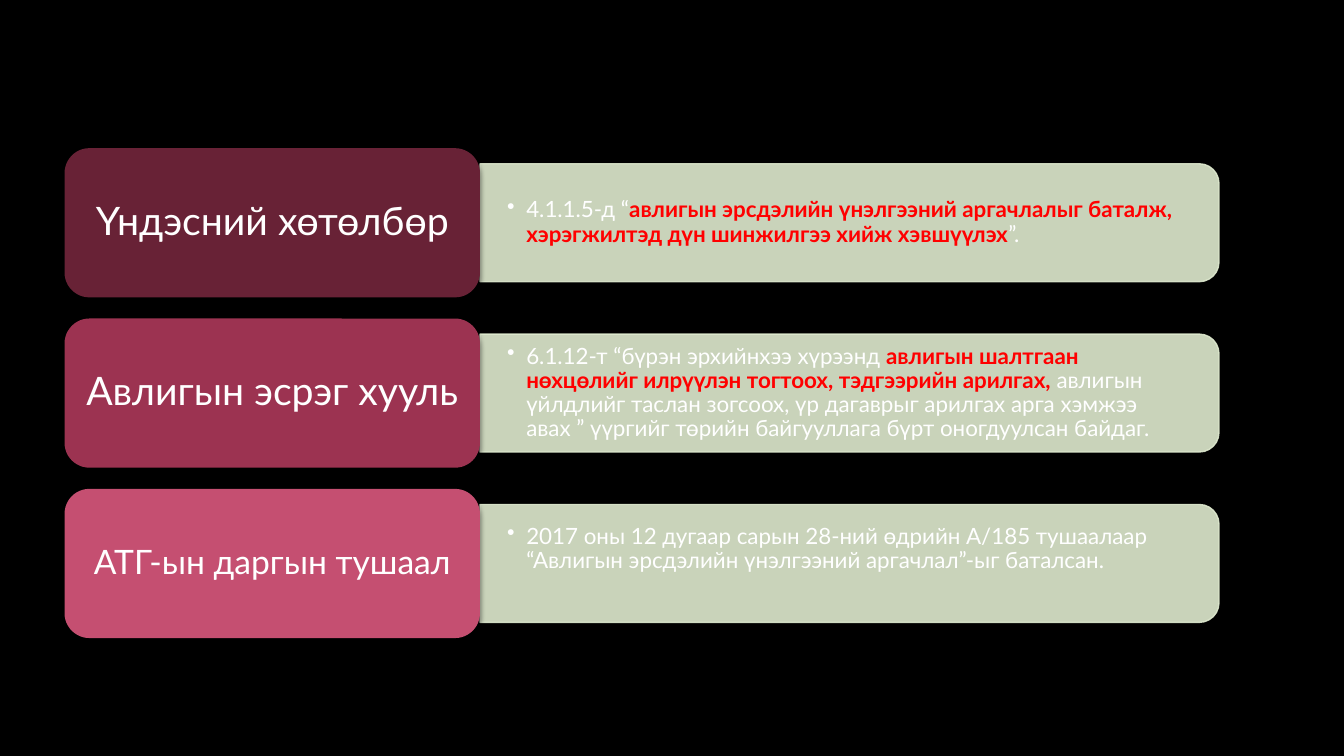
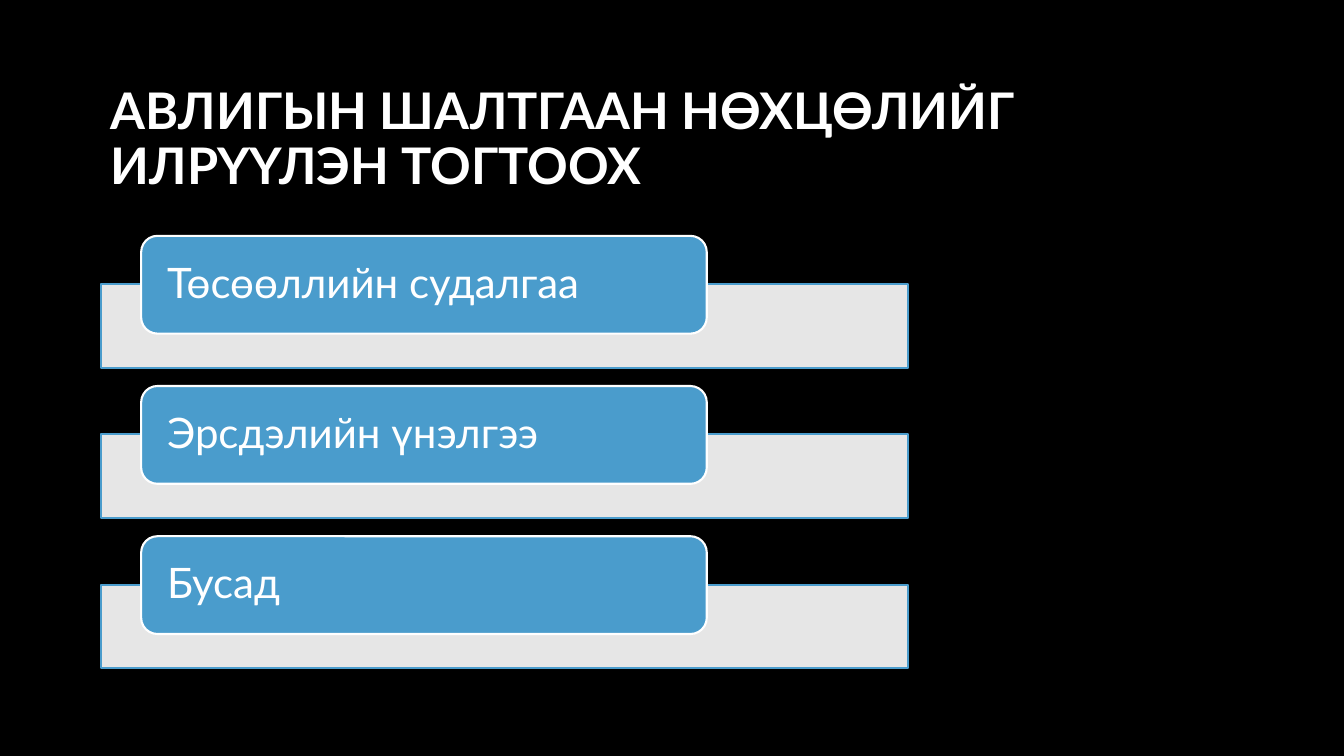
from pptx import Presentation
from pptx.dml.color import RGBColor
from pptx.enum import shapes, text
from pptx.oxml import ns
from pptx.oxml.xmlchemy import OxmlElement
from pptx.util import Inches, Pt

BLACK = RGBColor(0x00, 0x00, 0x00)
WHITE = RGBColor(0xFF, 0xFF, 0xFF)
RED = RGBColor(0xFF, 0x00, 0x00)
SAGE = RGBColor(0xDF, 0xEA, 0xCF)
WINE = RGBColor(0x68, 0x22, 0x36)
CRIMSON = RGBColor(0x9C, 0x33, 0x51)
ROSE = RGBColor(0xC5, 0x4F, 0x71)
BLUE = RGBColor(0x4A, 0x9C, 0xCC)

FONT = "Lato"
FILL_COLOR = "./a:solidFill/a:srgbClr"
ALL_COLORS = ".//a:srgbClr"

LABEL = dict(left=0.64, top=1.47, width=4.12, height=1.48, pitch=1.69)
PANEL = dict(left=4.76, width=7.33, height=1.17, text_width=7.27, text_height=1.05)
BAR = dict(left=1, top=2.82, width=8.01, height=0.83, pitch=1.49)
TAB = dict(left=1.4, rise=0.48, width=5.61, height=0.97)

# Label, label size, label colour, bottom inset of the panel text, (text, is key phrase) runs
LEGAL_BASES = [
    ("Үндэсний хөтөлбөр", 28, WINE, 0, [
        ("4.1.1.5-д “", False),
        ("авлигын эрсдэлийн үнэлгээний аргачлалыг баталж, "
         "хэрэгжилтэд дүн шинжилгээ хийж хэвшүүлэх", True),
        ("”.", False)]),
    ("Авлигын эсрэг хууль", 28, CRIMSON, 0, [
        ("6.1.12-т “бүрэн эрхийнхээ хүрээнд ", False),
        ("авлигын шалтгаан нөхцөлийг илрүүлэн тогтоох, тэдгээрийн арилгах, ", True),
        ("авлигын үйлдлийг таслан зогсоох, үр дагаврыг арилгах арга хэмжээ авах ” "
         "үүргийг төрийн байгууллага бүрт оногдуулсан байдаг.", False)]),
    ("АТГ-ын даргын тушаал", 24, ROSE, 0.29, [
        ("2017 оны 12 дугаар сарын 28-ний өдрийн А/185 тушаалаар "
         "“Авлигын эрсдэлийн үнэлгээний аргачлал”-ыг баталсан.", False)]),
]
TITLE = "АВЛИГЫН ШАЛТГААН НӨХЦӨЛИЙГ ИЛРҮҮЛЭН ТОГТООХ"
METHODS = ["Төсөөллийн судалгаа", "Эрсдэлийн үнэлгээ", "Бусад"]


def add_child(parent, tag, **attributes):
    child = OxmlElement(tag)
    for name, value in attributes.items():
        child.set(name, str(value))
    parent.append(child)
    return child


def set_opacity(shape, color_path, percent):
    for color in shape.element.spPr.xpath(color_path):
        add_child(color, "a:alpha", val=percent * 1000)


def add_drop_shadow(shape):
    effects = shape.element.spPr.find(ns.qn("a:effectLst"))
    shadow = add_child(effects, "a:outerShdw", blurRad=Pt(4), dist=Pt(3),
                       dir=90 * 60000, algn="ctr", rotWithShape=0)
    color = add_child(shadow, "a:srgbClr", val=BLACK)
    add_child(color, "a:alpha", val=54000)


def add_box(slide, kind, left, top, width, height, fill, line=None, line_width=1):
    shape = slide.shapes.add_shape(
        kind, Inches(left), Inches(top), Inches(width), Inches(height))
    shape.shadow.inherit = False
    shape.fill.solid()
    shape.fill.fore_color.rgb = fill
    if line is None:
        shape.line.fill.background()
    else:
        shape.line.color.rgb = line
        shape.line.width = Pt(line_width)
    return shape


def write(shape, runs, size, align=text.PP_ALIGN.LEFT, insets=(0.1, 0.05, 0.1, 0.05)):
    """Fill the shape with one paragraph of (text, colour, bold) runs."""
    frame = shape.text_frame
    left, top, right, bottom = map(Inches, insets)
    frame_format = dict(word_wrap=True, vertical_anchor=text.MSO_ANCHOR.MIDDLE,
                        margin_left=left, margin_top=top,
                        margin_right=right, margin_bottom=bottom)
    for name, value in frame_format.items():
        setattr(frame, name, value)
    paragraph = frame.paragraphs[0]
    paragraph.alignment = align
    paragraph.line_spacing = 0.9
    for words, color, bold in runs:
        run = paragraph.add_run()
        run.text = words
        for name, value in dict(name=FONT, size=Pt(size), bold=bold).items():
            setattr(run.font, name, value)
        run.font.color.rgb = color
    return paragraph


def add_text(slide, left, top, width, height, *args, **kwargs):
    box = slide.shapes.add_textbox(
        Inches(left), Inches(top), Inches(width), Inches(height))
    return write(box, *args, **kwargs)


def add_bullet(paragraph, indent):
    properties = paragraph._p.get_or_add_pPr()
    properties.set("marL", str(Inches(indent)))
    properties.set("indent", str(-Inches(indent)))
    add_child(properties, "a:buChar", char="•")


def add_panel(slide, middle, runs, bottom_inset):
    """Add a panel with rounded right corners, and its bulleted text."""
    width, height = PANEL["width"], PANEL["height"]
    center = PANEL["left"] + width / 2
    panel = add_box(slide, shapes.MSO_SHAPE.ROUND_2_SAME_RECTANGLE,
                    center - height / 2, middle - width / 2, height, width, SAGE, SAGE)
    panel.rotation = 90
    set_opacity(panel, ALL_COLORS, 90)
    styled = [(words, RED if key else WHITE, key) for words, key in runs]
    text_height = PANEL["text_height"]
    paragraph = add_text(slide, PANEL["left"], middle - text_height / 2,
                         PANEL["text_width"], text_height, styled, 16,
                         insets=(0.27, 0, 0.27, bottom_inset))
    add_bullet(paragraph, 0.19)


def add_label(slide, top, words, size, color):
    label = add_box(slide, shapes.MSO_SHAPE.ROUNDED_RECTANGLE, LABEL["left"], top,
                    LABEL["width"], LABEL["height"], color)
    add_drop_shadow(label)
    write(label, [(words, WHITE, False)], size, text.PP_ALIGN.CENTER)


def add_method(slide, top, words):
    """Add a wide bar with a named tab over its upper edge."""
    bar = add_box(slide, shapes.MSO_SHAPE.RECTANGLE, BAR["left"], top,
                  BAR["width"], BAR["height"], WHITE, BLUE, 1.5)
    set_opacity(bar, FILL_COLOR, 90)
    tab = add_box(slide, shapes.MSO_SHAPE.ROUNDED_RECTANGLE, TAB["left"],
                  top - TAB["rise"], TAB["width"], TAB["height"], BLUE, WHITE, 1.5)
    write(tab, [(words, WHITE, False)], 30, insets=(0.21, 0, 0.21, 0))


def add_title(slide, words):
    add_text(slide, 1, 0.67, 11.32, 1.45, [(words, WHITE, True)], 36)


def build_legal_bases(slide):
    for row, (words, size, color, bottom_inset, runs) in enumerate(LEGAL_BASES):
        top = LABEL["top"] + row * LABEL["pitch"]
        add_panel(slide, top + LABEL["height"] / 2, runs, bottom_inset)
        add_label(slide, top, words, size, color)


def build_methods(slide):
    add_title(slide, TITLE)
    for row, words in enumerate(METHODS):
        add_method(slide, BAR["top"] + row * BAR["pitch"], words)


def main():
    presentation = Presentation()
    presentation.slide_width = Inches(13.33)
    presentation.slide_height = Inches(7.5)
    background = presentation.slide_master.background.fill
    background.solid()
    background.fore_color.rgb = BLACK
    blank = presentation.slide_layouts[6]
    for build in (build_legal_bases, build_methods):
        build(presentation.slides.add_slide(blank))
    presentation.save("out.pptx")


if __name__ == "__main__":
    main()
